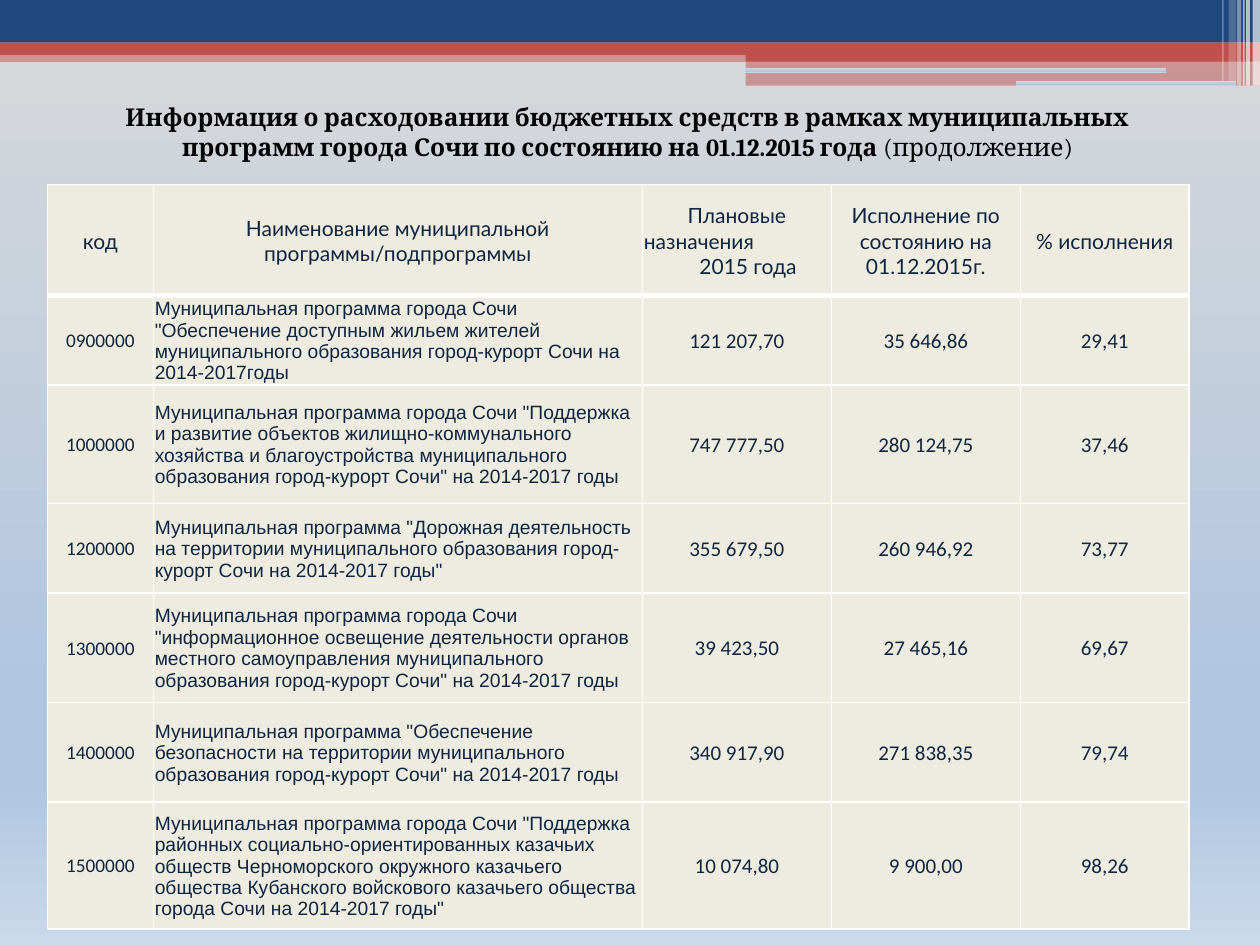
from lxml import etree
from pptx import Presentation
from pptx import util as u
from pptx.dml.color import RGBColor
from pptx.enum import shapes, text
from pptx.oxml.ns import qn

BLUE, RED, WHITE, CREAM = "1F497D", "C0504D", "FFFFFF", "EEECE1"
NAVY, DARK_BLUE, BLACK = "0F243E", "10253F", "000000"
BACKDROP = [(0, "D9D9D9"), (74, "B0C6E1"), (83, "B0C6E1"), (100, "CAD9EB")]
RECT, ROUND = shapes.MSO_SHAPE.RECTANGLE, shapes.MSO_SHAPE.ROUNDED_RECTANGLE
LEFT, CENTER = text.PP_ALIGN.LEFT, text.PP_ALIGN.CENTER
MIDDLE = text.MSO_ANCHOR.MIDDLE


def rgb(value):
    return RGBColor.from_string(value)


def add_color(parent, value):
    return etree.SubElement(parent, qn("a:srgbClr"), val=value)


def set_backdrop(fill, element):
    """Fill with the vertical backdrop gradient; element holds the fill's XML."""
    fill.gradient()
    grad = element.find(".//" + qn("a:gradFill"))
    stops = grad.find(qn("a:gsLst"))
    for stop in list(stops):
        stops.remove(stop)
    for position, color in BACKDROP:
        add_color(etree.SubElement(stops, qn("a:gs"), pos=str(position * 1000)), color)
    grad.find(qn("a:lin")).set("ang", "5400000")


class SlideBuilder:
    def __init__(self, prs):
        self.s = prs.slides.add_slide(prs.slide_layouts[5])
        set_backdrop(self.s.background.fill, self.s.element)

    def bar(self, box, color=None, opacity=100, kind=RECT):
        """Draw a borderless bar; without a color it takes the backdrop gradient."""
        sp = self.s.shapes.add_shape(kind, *map(u.Cm, box))
        sp.shadow.inherit = False
        sp.line.fill.background()
        if color is None:
            set_backdrop(sp.fill, sp.element.spPr)
            return
        sp.fill.solid()
        sp.fill.fore_color.rgb = rgb(color)
        if opacity < 100:
            clr = sp.element.spPr.find(".//" + qn("a:srgbClr"))
            etree.SubElement(clr, qn("a:alpha"), val=str(opacity * 1000))

    def run(self, p, words, font, size, color, bold=False):
        r = p.add_run()
        r.text = words
        r.font.name, r.font.size, r.font.bold = font, u.Pt(size), bold
        r.font.color.rgb = rgb(color)

    def title(self, box, runs):
        sp = self.s.shapes.title
        sp.left, sp.top, sp.width, sp.height = map(u.Cm, box)
        tf = sp.text_frame
        tf.word_wrap, tf.auto_size = True, text.MSO_AUTO_SIZE.NONE
        tf.vertical_anchor = MIDDLE
        p = tf.paragraphs[0]
        p.alignment = CENTER
        for words, bold in runs:
            self.run(p, words, "Cambria", 14, BLACK, bold)

    def borders(self, cell, top, bottom):
        tc_pr = cell._tc.get_or_add_tcPr()
        sides = (("L", 1), ("R", 1), ("T", top), ("B", bottom))
        for i, (side, points) in enumerate(sides):
            ln = etree.Element(qn("a:ln" + side), w=str(u.Pt(points)))
            add_color(etree.SubElement(ln, qn("a:solidFill")), WHITE)
            tc_pr.insert(i, ln)

    def cell(self, cell, lines, style, top=1, bottom=1):
        """Fill a cell; lines are (words, alignment, left indent) per paragraph."""
        cell.fill.solid()
        cell.fill.fore_color.rgb = rgb(CREAM)
        cell.vertical_anchor = MIDDLE
        cell.margin_left = cell.margin_right = cell.margin_top = u.Cm(0.03)
        cell.margin_bottom = 0
        tf = cell.text_frame
        for i, (words, align, indent) in enumerate(lines):
            p = tf.add_paragraph() if i else tf.paragraphs[0]
            p.alignment = align
            if indent:
                p._p.get_or_add_pPr().set("marL", str(u.Cm(indent)))
            self.run(p, words, *style)
        self.borders(cell, top, bottom)

    def table(self, left, top, widths, heights, header, rows):
        box = map(u.Cm, (left, top, sum(widths), sum(heights)))
        table = self.s.shapes.add_table(len(heights), len(widths), *box).table
        table.first_row = table.horz_banding = False
        for column, width in zip(table.columns, widths):
            column.width = u.Cm(width)
        for row, height in zip(table.rows, heights):
            row.height = u.Cm(height)
        for c, lines in enumerate(header):
            self.cell(table.cell(0, c), lines, ("Lato", 12, NAVY), bottom=3)
        number = ("Calibri", 12, DARK_BLUE)
        styles = [("Calibri", 11, NAVY), ("Arial", 11, NAVY)] + [number] * 3
        for r, values in enumerate(rows, 1):
            for c, value in enumerate(values):
                line = (value, LEFT if c == 1 else CENTER, 0)
                self.cell(table.cell(r, c), [line], styles[c], top=3 if r == 1 else 1)


HEADER = [
    [("код", CENTER, 0)],
    [("Наименование муниципальной программы/подпрограммы", CENTER, 0)],
    [("Плановые", CENTER, 0), ("назначения", LEFT, 0), ("2015 года", CENTER, 0.45)],
    [("Исполнение по состоянию на 01.12.2015г.", CENTER, 0)],
    [("% исполнения", CENTER, 0)],
]
PROGRAMS = [
    ("0900000", 'Муниципальная программа города Сочи "Обеспечение доступным жильем жителей '
     'муниципального образования город-курорт Сочи на 2014-2017годы',
     "121 207,70", "35 646,86", "29,41"),
    ("1000000", 'Муниципальная программа города Сочи "Поддержка и развитие объектов '
     'жилищно-коммунального хозяйства и благоустройства муниципального образования '
     'город-курорт Сочи" на 2014-2017 годы',
     "747 777,50", "280 124,75", "37,46"),
    ("1200000", 'Муниципальная программа "Дорожная деятельность на территории '
     'муниципального образования город-курорт Сочи на 2014-2017 годы"',
     "355 679,50", "260 946,92", "73,77"),
    ("1300000", 'Муниципальная программа города Сочи "информационное освещение '
     'деятельности органов местного самоуправления муниципального образования '
     'город-курорт Сочи" на 2014-2017 годы',
     "39 423,50", "27 465,16", "69,67"),
    ("1400000", 'Муниципальная программа "Обеспечение безопасности на территории '
     'муниципального образования город-курорт Сочи" на 2014-2017 годы',
     "340 917,90", "271 838,35", "79,74"),
    ("1500000", 'Муниципальная программа города Сочи "Поддержка районных '
     'социально-ориентированных казачьих обществ Черноморского окружного казачьего '
     'общества Кубанского войскового казачьего общества города Сочи на 2014-2017 годы"',
     "10 074,80", "9 900,00", "98,26"),
]
BANDS = [
    ((0, 1.02, 25.4, 0.23), RED, 50),
    ((0, 0, 25.4, 0.86), BLUE, 100),
    ((0, 0.86, 25.4, 0.25), RED, 100),
    ((15.03, 0.99, 10.37, 0.25), RED, 100),
    ((15.03, 1.22, 10.37, 0.51), RED, 50),
]
SLOTS = [(15.02, 1.37, 8.5, 0.09), (20.48, 1.63, 4.45, 0.1)]
# left, width, height, opacity
STRIPES = [
    (25.25, 0.15, 1.73, 65), (25.12, 0.08, 1.73, 65), (25.06, 0.03, 1.73, 60),
    (24.94, 0.08, 1.73, 40), (24.77, 0.15, 1.63, 20), (24.64, 0.03, 1.63, 30),
]


def main():
    prs = Presentation()
    prs.slide_width, prs.slide_height = u.Cm(25.4), u.Cm(19.05)
    slide = SlideBuilder(prs)
    for box, color, opacity in BANDS:
        slide.bar(box, color, opacity)
    for box in SLOTS:
        slide.bar(box, kind=ROUND)
    for left, width, height, opacity in STRIPES:
        slide.bar((left, 0, width, height), WHITE, opacity)
    slide.table(0.96, 3.72, [2.13, 9.86, 3.81, 3.81, 3.4],
                [2.24, 1.8, 2.39, 1.8, 2.21, 2.01, 2.56], HEADER, PROGRAMS)
    slide.title((1.35, 1.93, 22.6, 1.45), [
        ("Информация о расходовании бюджетных средств в рамках муниципальных "
         "программ города Сочи по состоянию на 01.12.2015 года ", True),
        ("(продолжение)", False)])
    prs.save("out.pptx")


if __name__ == "__main__":
    main()
